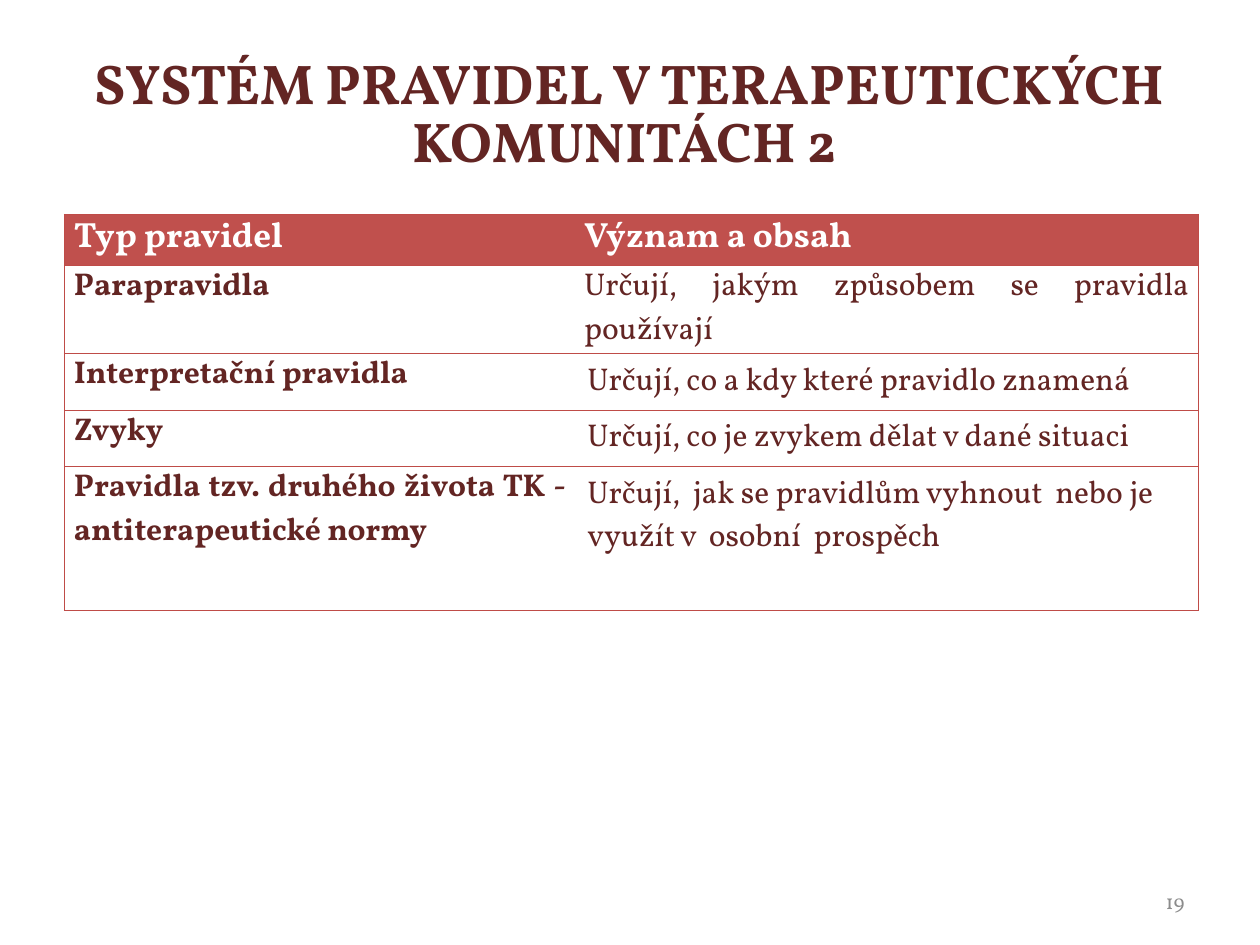
from lxml import etree
from pptx import Presentation
from pptx.dml import color
from pptx.enum import text
from pptx.oxml import ns
from pptx.util import Cm, Pt

FONT = "Vollkorn"
DARK_RED = "632523"
HEADER_RED = "C0504D"
BORDER_RED = "BF4C48"
WHITE = "FFFFFF"
GREY = "8C8C8C"
PLAIN_STYLE = "{2D5ABB26-0587-4C30-8999-92F81FD0307C}"

ALIGN = text.PP_ALIGN
HEADER = ("Typ pravidel", "Význam a obsah ")
RULES = [
    ("Parapravidla ", "Určují, jakým způsobem se pravidla používají"),
    ("Interpretační pravidla ", "Určují, co a kdy které pravidlo znamená"),
    ("Zvyky ", "Určují, co je zvykem dělat v dané situaci"),
    ("Pravidla tzv. druhého života TK - antiterapeutické normy ",
     "Určují,  jak se pravidlům vyhnout  nebo je využít v  osobní  prospěch"),
]
COLUMN_SHARES = (0.45, 0.55)
ROW_HEIGHTS = (1.03, 1.78, 1.14, 1.14, 2.9)


def rgb(value):
    return color.RGBColor.from_string(value)


def write_text(frame, words, size=18, fill=DARK_RED, bold=False, align=ALIGN.LEFT, spacing=None):
    frame.word_wrap = True
    paragraph = frame.paragraphs[0]
    paragraph.alignment = align
    if spacing:
        paragraph.line_spacing = spacing
    run = paragraph.add_run()
    run.text = words
    run.font.name = FONT
    run.font.size = Pt(size)
    run.font.bold = bold
    run.font.color.rgb = rgb(fill)


def add_text_box(slide, left, top, width, height, words, **text_format):
    shape = slide.shapes.add_textbox(Cm(left), Cm(top), Cm(width), Cm(height))
    shape.text_frame.vertical_anchor = text.MSO_ANCHOR.MIDDLE
    write_text(shape.text_frame, words, **text_format)


def set_borders(cell, visible_sides):
    properties = cell._tc.get_or_add_tcPr()
    for side in "LRTB":
        line = etree.SubElement(properties, ns.qn(f"a:ln{side}"), w=str(Pt(0.75)))
        if side in visible_sides:
            fill = etree.SubElement(line, ns.qn("a:solidFill"))
            etree.SubElement(fill, ns.qn("a:srgbClr"), val=BORDER_RED)
        else:
            etree.SubElement(line, ns.qn("a:noFill"))


def format_cell(cell, words, is_header, is_first_column, is_tight):
    if is_tight:
        cell.margin_left = cell.margin_right = Cm(0.19)
        cell.margin_top = cell.margin_bottom = Cm(0)
    set_borders(cell, "LTB" if is_first_column else "RTB")
    if is_header:
        cell.fill.solid()
        cell.fill.fore_color.rgb = rgb(HEADER_RED)
    else:
        cell.fill.background()
    write_text(
        cell.text_frame, words,
        size=20 if is_header else 18,
        fill=WHITE if is_header else DARK_RED,
        bold=is_header or is_first_column,
        align=ALIGN.JUSTIFY if is_tight else ALIGN.LEFT,
    )


def add_rules_table(slide, left, top, width):
    rows = [HEADER, *RULES]
    frame = slide.shapes.add_table(
        len(rows), len(HEADER), Cm(left), Cm(top), Cm(width), Cm(sum(ROW_HEIGHTS)))
    table = frame.table
    table.horz_banding = False
    table._tbl.tblPr.find(ns.qn("a:tableStyleId")).text = PLAIN_STYLE
    for column, share in zip(table.columns, COLUMN_SHARES):
        column.width = Cm(width * share)
    for row, height in zip(table.rows, ROW_HEIGHTS):
        row.height = Cm(height)
    for row_index, row in enumerate(rows):
        for column_index, words in enumerate(row):
            is_first_column = column_index == 0
            format_cell(table.cell(row_index, column_index), words, row_index == 0,
                        is_first_column, is_first_column or row_index < 2)


def build_rules_slide(presentation):
    slide = presentation.slides.add_slide(presentation.slide_layouts[6])
    add_text_box(slide, 1.27, 0.53, 22.86, 3.61,
                 "SYSTÉM PRAVIDEL V TERAPEUTICKÝCH KOMUNITÁCH 2 ",
                 size=32, bold=True, align=ALIGN.CENTER, spacing=0.86)
    add_rules_table(slide, 1.3, 4.32, 22.86)
    add_text_box(slide, 18.2, 17.65, 5.93, 1.02, "19", size=12, fill=GREY, align=ALIGN.RIGHT)


def main():
    presentation = Presentation()
    presentation.slide_width = Cm(25.4)
    presentation.slide_height = Cm(19.05)
    build_rules_slide(presentation)
    presentation.save("out.pptx")


if __name__ == "__main__":
    main()
